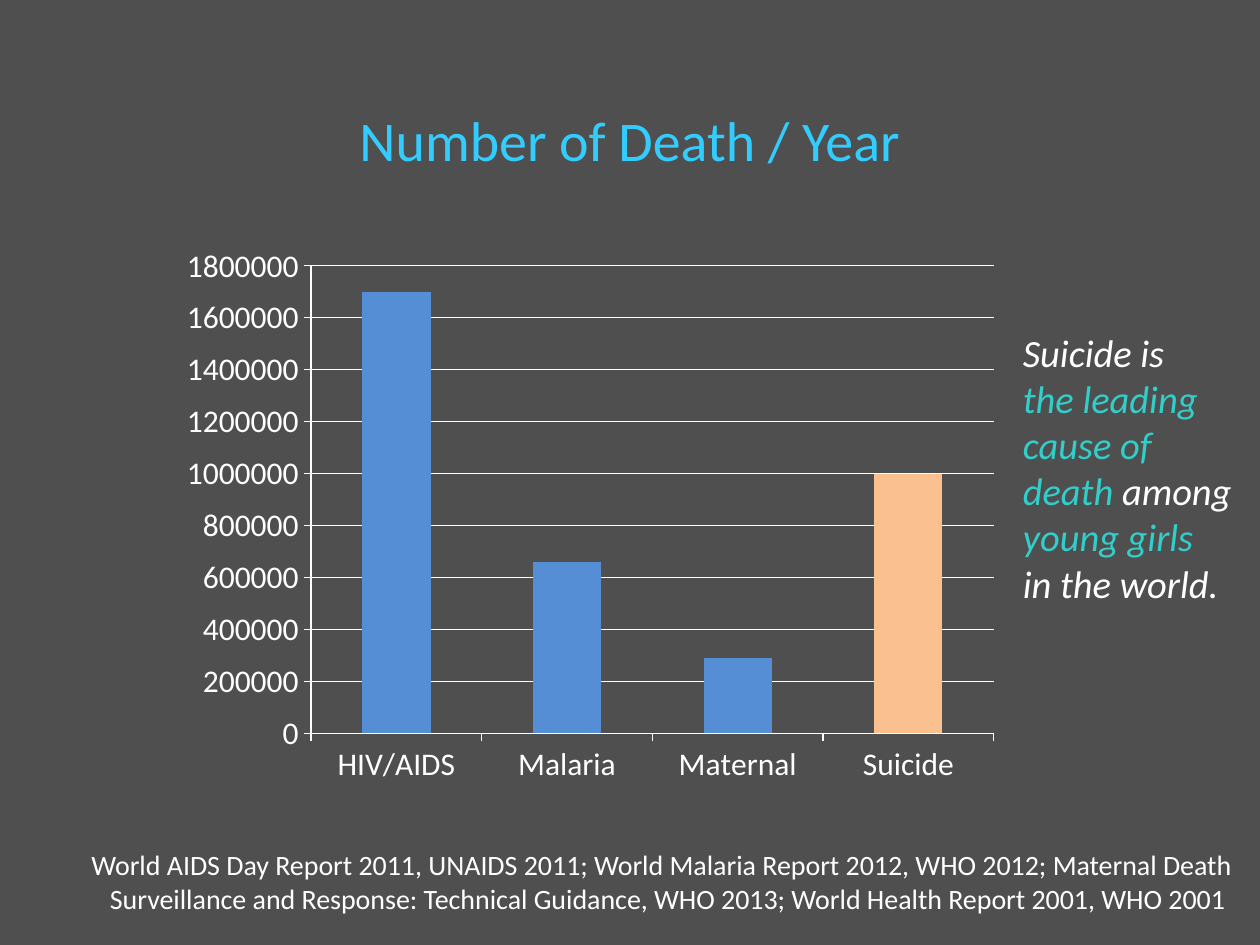
"""Build a slide comparing yearly deaths by cause."""
import dataclasses

import pptx
import pptx.chart.data
import pptx.dml.color
import pptx.enum.chart
import pptx.enum.text
import pptx.util

Inches = pptx.util.Inches
Align = pptx.enum.text.PP_ALIGN
Anchor = pptx.enum.text.MSO_ANCHOR


@dataclasses.dataclass(frozen=True)
class Theme:
    """Hold the colours, font and type sizes of the slide."""
    back: str = "4F4F4F"
    white: str = "FFFFFF"
    title: str = "33CCFF"
    accent: str = "32CECA"
    bar: str = "558ED5"
    focus: str = "FAC090"
    face: str = "Calibri"
    head: int = 32
    note: int = 22
    label: int = 18
    source: int = 16


THEME = Theme()


def apply(item, values):
    """Set each named value on an item."""
    for name, value in values.items():
        setattr(item, name, value)


def paint(fill, color):
    """Give a fill one solid colour."""
    fill.solid()
    fill.fore_color.rgb = pptx.dml.color.RGBColor.from_string(color)


def style(font, size, color, **extra):
    """Format a font from the theme."""
    apply(font, {"name": THEME.face, "size": pptx.util.Pt(size), **extra})
    paint(font.fill, color)


def add_text(slide, box, lines, size, align=Align.LEFT, anchor=Anchor.TOP, **extra):
    """Place lines of coloured runs in a wrapped text box."""
    frame = slide.shapes.add_textbox(*box).text_frame
    apply(frame, {"word_wrap": True, "vertical_anchor": anchor})
    for index, line in enumerate(lines):
        para = frame.add_paragraph() if index else frame.paragraphs[0]
        para.alignment = align
        for words, color in line:
            run = para.add_run()
            run.text = words
            style(run.font, size, color, **extra)


def add_title(slide, box):
    """Place the centred heading."""
    lines = [[("Number of Death / Year", THEME.title)]]
    add_text(slide, box, lines, THEME.head, Align.CENTER, Anchor.MIDDLE)


def add_bars(slide, box):
    """Place the column chart of deaths with suicide in focus."""
    data = pptx.chart.data.CategoryChartData()
    data.categories = ["HIV/AIDS", "Malaria", "Maternal", "Suicide"]
    data.add_series("Series 1", [1700000, 660000, 290000, 1000000])
    kind = pptx.enum.chart.XL_CHART_TYPE.COLUMN_CLUSTERED
    chart = slide.shapes.add_chart(kind, *box, data).chart
    apply(chart, {"has_legend": False, "has_title": False})
    style(chart.font, THEME.label, THEME.white)
    plot = chart.plots[0]
    apply(plot, {"gap_width": 150, "vary_by_categories": False})
    bars = plot.series[0]
    paint(bars.format.fill, THEME.bar)
    paint(bars.points[3].format.fill, THEME.focus)
    value = chart.value_axis
    apply(value, {"minimum_scale": 0, "maximum_scale": 1800000,
                  "major_unit": 200000, "has_major_gridlines": True})
    for axis in (chart.category_axis, value):
        axis.major_tick_mark = pptx.enum.chart.XL_TICK_MARK.OUTSIDE
    for part in (chart.category_axis, value, value.major_gridlines):
        part.format.line.width = pptx.util.Pt(0.75)
        paint(part.format.line.fill, THEME.white)


def add_note(slide, box):
    """Place the italic remark beside the chart."""
    lines = [
        [("Suicide is", THEME.white)],
        [("the leading cause of death ", THEME.accent), ("among", THEME.white)],
        [("young girls", THEME.accent)],
        [("in the world.", THEME.white)],
    ]
    add_text(slide, box, lines, THEME.note, italic=True)


def add_source(slide, box):
    """Place the list of sources at the foot."""
    words = ("World AIDS Day Report 2011, UNAIDS 2011; World Malaria Report 2012, "
             "WHO 2012; Maternal Death Surveillance and Response: Technical Guidance, "
             "WHO 2013; World Health Report 2001, WHO 2001 ")
    add_text(slide, box, [[(words, THEME.white)]], THEME.source, Align.RIGHT)


def main():
    """Build and save the slide."""
    deck = pptx.Presentation()
    apply(deck, {"slide_width": Inches(10), "slide_height": Inches(7.5)})
    slide = deck.slides.add_slide(deck.slide_layouts[6])
    paint(slide.background.fill, THEME.back)
    regions = [
        (add_title, (0, 0.48, 10, 1.25)),
        (add_source, (0.56, 6.68, 9.32, 0.64)),
        (add_bars, (1.35, 1.87, 6.67, 4.44)),
        (add_note, (8.02, 2.56, 1.87, 2.32)),
    ]
    for draw, box in regions:
        draw(slide, [Inches(length) for length in box])
    deck.save("out.pptx")


if __name__ == "__main__":
    main()
